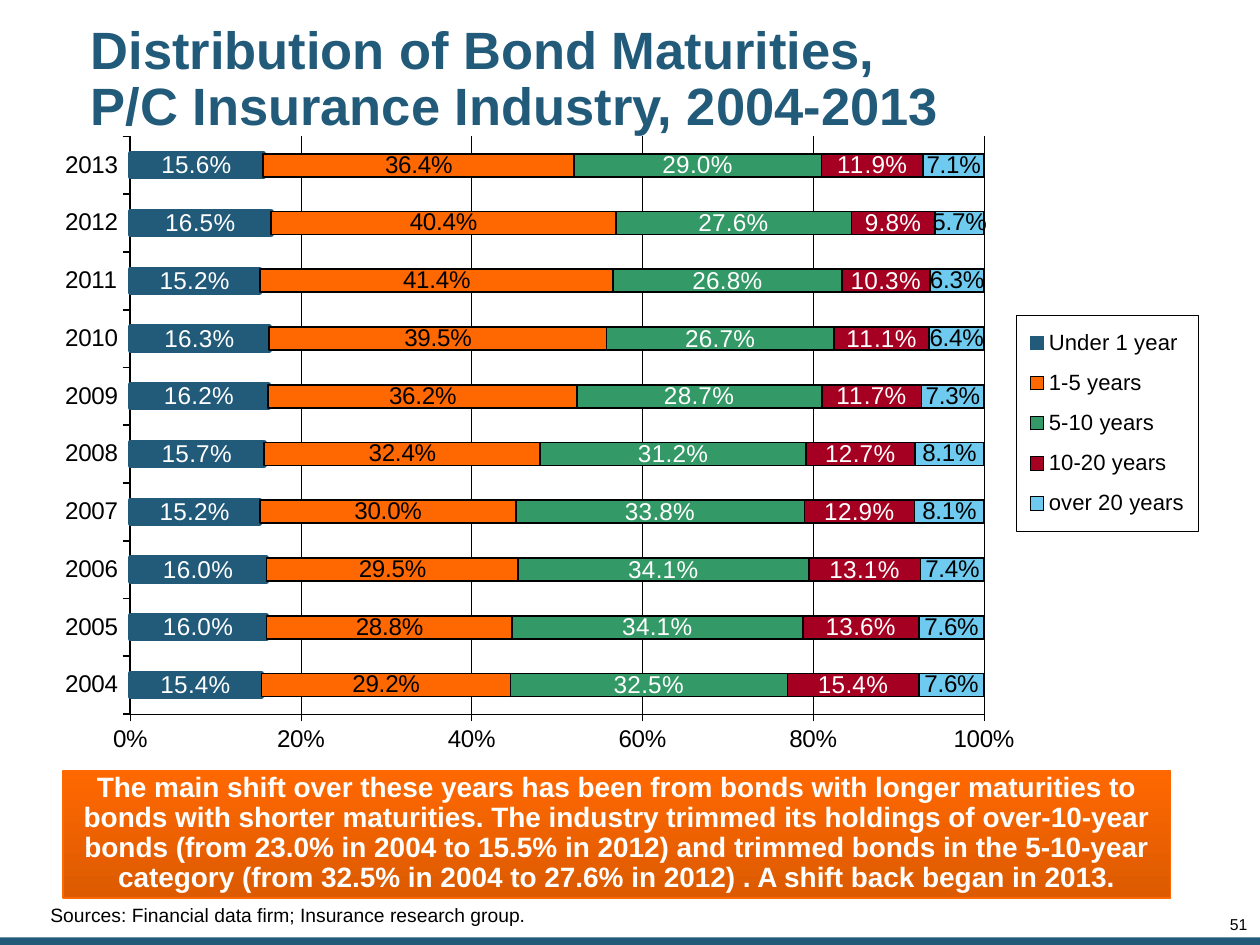
from lxml import etree
from pptx import Presentation
from pptx.chart.data import CategoryChartData
from pptx.dml.color import RGBColor
from pptx.enum.chart import (XL_CHART_TYPE, XL_LABEL_POSITION,
                             XL_LEGEND_POSITION, XL_TICK_MARK)
from pptx.enum.shapes import MSO_SHAPE
from pptx.enum.text import MSO_ANCHOR, PP_ALIGN
from pptx.oxml import parse_xml
from pptx.oxml.ns import nsdecls, qn
from pptx.util import Pt

BAR = XL_CHART_TYPE.BAR_STACKED_100
CENTER_LABEL = XL_LABEL_POSITION.CENTER
LEGEND_RIGHT = XL_LEGEND_POSITION.RIGHT
TICK_OUT, TICK_NONE = XL_TICK_MARK.OUTSIDE, XL_TICK_MARK.NONE
RECT = MSO_SHAPE.RECTANGLE
MIDDLE, BOTTOM = MSO_ANCHOR.MIDDLE, MSO_ANCHOR.BOTTOM
LEFT, CENTER, RIGHT = PP_ALIGN.LEFT, PP_ALIGN.CENTER, PP_ALIGN.RIGHT

# Content
FONT = "Arial"
BLUE, ORANGE, BLACK, WHITE = "225A7A", "FF6801", "000000", "FFFFFF"
TITLE = "Distribution of Bond Maturities,\vP/C Insurance Industry, 2004-2013"
CALLOUT = (
    "The main shift over these years has been from bonds with longer maturities "
    "to bonds with shorter maturities. The industry trimmed its holdings of "
    "over-10-year bonds (from 23.0% in 2004 to 15.5% in 2012) and trimmed bonds "
    "in the 5-10-year category (from 32.5% in 2004 to 27.6% in 2012) . "
    "A shift back began in 2013.")
SOURCES = "Sources: Financial data firm; Insurance research group."
PAGE = "51"
YEARS = [str(year) for year in range(2004, 2014)]
# name, percentages, fill, line colour, line width, label colour, label size
SERIES = [
    ("Under 1 year", [15.4, 16.0, 16.0, 15.2, 15.7, 16.2, 16.3, 15.2, 16.5, 15.6],
     BLUE, BLUE, 2.95, WHITE, 13.9),
    ("1-5 years", [29.2, 28.8, 29.5, 30.0, 32.4, 36.2, 39.5, 41.4, 40.4, 36.4],
     ORANGE, BLACK, 0.98, BLACK, 13.8),
    ("5-10 years", [32.5, 34.1, 34.1, 33.8, 31.2, 28.7, 26.7, 26.8, 27.6, 29.0],
     "339966", BLACK, 0.98, WHITE, 13.9),
    ("10-20 years", [15.4, 13.6, 13.1, 12.9, 12.7, 11.7, 11.1, 10.3, 9.8, 11.9],
     "A50021", BLACK, 0.98, WHITE, 13.9),
    ("over 20 years", [7.6, 7.6, 7.4, 8.1, 8.1, 7.3, 6.4, 6.3, 5.7, 7.1],
     "6FCAEF", BLACK, 0.98, BLACK, 13.8),
]


def rgb(value):
    return RGBColor.from_string(value)


def style_font(font, size, color, bold=False):
    font.name, font.size, font.bold = FONT, Pt(size), bold
    font.color.rgb = rgb(color)


def style_line(line, color, width):
    line.color.rgb = rgb(color)
    line.width = Pt(width)


def write(sp, text, size, color, align, anchor, insets, spacing, bold=False):
    tf = sp.text_frame
    tf.text = text
    tf.word_wrap = True
    tf.vertical_anchor = anchor
    (tf.margin_left, tf.margin_top,
     tf.margin_right, tf.margin_bottom) = [Pt(inset) for inset in insets]
    p = tf.paragraphs[0]
    p.alignment, p.line_spacing = align, spacing
    for r in p.runs:
        style_font(r.font, size, color, bold)


def place(parent, index, x, y, w, h, inner=False):
    """Give a plot area or legend a fixed layout in fractions of the chart."""
    for old in parent.findall(qn("c:layout")):
        parent.remove(old)
    layout = etree.Element(qn("c:layout"))
    manual = etree.SubElement(layout, qn("c:manualLayout"))
    items = [("layoutTarget", "inner")] if inner else []
    items += [("xMode", "edge"), ("yMode", "edge"),
              ("x", x), ("y", y), ("w", w), ("h", h)]
    for tag, value in items:
        etree.SubElement(manual, qn("c:" + tag)).set("val", str(value))
    parent.insert(index, layout)


prs = Presentation()
prs.slide_width, prs.slide_height = Pt(720), Pt(540)
s = prs.slides.add_slide(prs.slide_layouts[5])
shapes = s.shapes

# Footer bar and page number
bar = shapes.add_shape(RECT, Pt(0), Pt(535.7), Pt(720), Pt(4.3))
bar.shadow.inherit = False
bar.fill.solid()
bar.fill.fore_color.rgb = rgb(BLUE)
bar.line.fill.background()
page = shapes.add_textbox(Pt(677.5), Pt(524), Pt(35.3), Pt(9.4))
write(page, PAGE, 9, BLACK, RIGHT, MIDDLE, (0, 0, 0, 0), 0.85)

# Title
title = shapes.title
title.left, title.top, title.width, title.height = Pt(48.2), Pt(12.2), Pt(556.6), Pt(67.7)
write(title, TITLE, 30, BLUE, LEFT, MIDDLE, (3.6, 3.6, 3.6, 3.6), 0.9, True)

# Chart
data = CategoryChartData(number_format="0.0%")
data.categories = YEARS
for name, percents, *_ in SERIES:
    data.add_series(name, [round(value / 100, 3) for value in percents])
chart = shapes.add_chart(BAR, Pt(31.7), Pt(62.6), Pt(656.6), Pt(416.2), data).chart
chart.has_title = False
style_font(chart.font, 13.8, BLACK)
plot = chart.plots[0]
plot.gap_width, plot.overlap, plot.vary_by_categories = 150, 100, False

for series, (_, _, fill, edge, width, ink, size) in zip(plot.series, SERIES):
    series.format.fill.solid()
    series.format.fill.fore_color.rgb = rgb(fill)
    style_line(series.format.line, edge, width)
    labels = series.data_labels
    labels.show_value = True
    labels.number_format, labels.number_format_is_linked = "0.0%", False
    labels.position = CENTER_LABEL
    style_font(labels.font, size, ink)

# Axes
years, share = chart.category_axis, chart.value_axis
for axis, width in ((years, 0.98), (share, 0.25)):
    axis.major_tick_mark, axis.minor_tick_mark = TICK_OUT, TICK_NONE
    style_font(axis.tick_labels.font, 13.8, BLACK)
    style_line(axis.format.line, BLACK, width)
years.has_major_gridlines = False
share.minimum_scale, share.maximum_scale, share.major_unit = 0, 1, 0.2
share.tick_labels.number_format = "0%"
share.tick_labels.number_format_is_linked = False
share.has_major_gridlines = True
style_line(share.major_gridlines.format.line, BLACK, 0.25)
place(chart.element.find(".//" + qn("c:plotArea")), 0, 0.065, 0.037, 0.743, 0.793, True)

# Legend with a thin frame
chart.has_legend = True
legend = chart.legend
legend.position, legend.include_in_layout = LEGEND_RIGHT, False
style_font(legend.font, 12.6, BLACK)
box = chart.element.find(".//" + qn("c:legend"))
place(box, 1, 0.836, 0.283, 0.159, 0.296)
box.find(qn("c:overlay")).addnext(parse_xml(
    f'<c:spPr {nsdecls("c", "a")}><a:noFill/><a:ln w="3175"><a:solidFill>'
    f'<a:srgbClr val="{BLACK}"/></a:solidFill></a:ln></c:spPr>'))

# Sources
sources = shapes.add_textbox(Pt(0), Pt(503.3), Pt(639.4), Pt(36.7))
write(sources, SOURCES, 11, BLACK, LEFT, BOTTOM, (28.8, 0, 0, 10.8), 0.85)

# Callout
callout = shapes.add_shape(RECT, Pt(36), Pt(440.6), Pt(632.9), Pt(72.7))
callout.shadow.inherit = False
callout.fill.gradient()
callout.fill.gradient_angle = 270
for stop, color, position in zip(callout.fill.gradient_stops, (ORANGE, "DC5A01"), (0, 1)):
    stop.color.rgb, stop.position = rgb(color), position
style_line(callout.line, ORANGE, 1)
write(callout, CALLOUT, 16, WHITE, CENTER, MIDDLE, (7.2, 3.6, 7.2, 5), 0.9, True)

prs.save("out.pptx")
